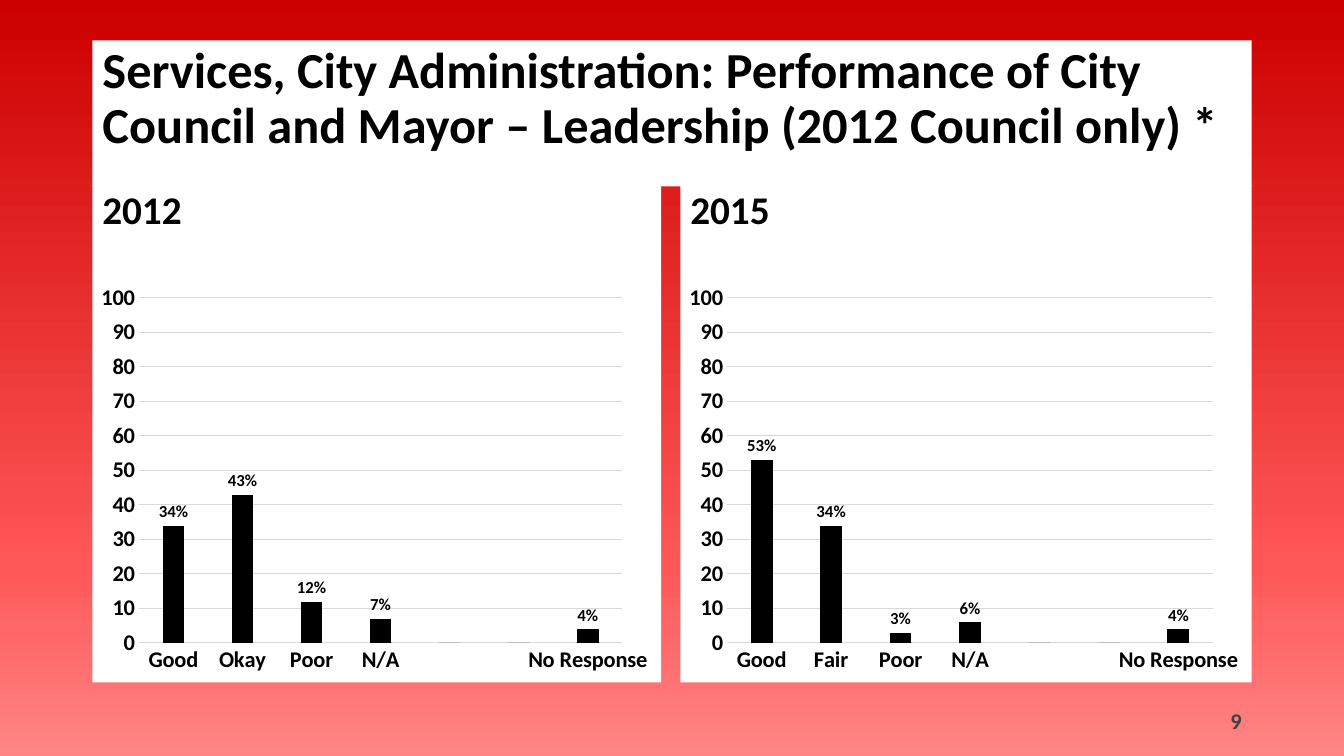
from copy import deepcopy
from dataclasses import dataclass

from lxml.etree import SubElement as Sub
from pptx import Presentation
from pptx.chart.data import CategoryChartData as Data
from pptx.dml.color import RGBColor as RGB
from pptx.enum.chart import XL_CHART_TYPE as Kind
from pptx.enum.chart import XL_LABEL_POSITION as Spot
from pptx.enum.chart import XL_TICK_MARK as Tick
from pptx.enum.text import MSO_ANCHOR as Anchor
from pptx.enum.text import MSO_AUTO_SIZE as Fit
from pptx.enum.text import PP_ALIGN as Align
from pptx.oxml.ns import qn
from pptx.util import Inches, Pt


@dataclass(frozen=True)
class Theme:
    """Colours, type sizes and font of the slide."""
    font: str = "Calibri"
    ink: str = "000000"
    paper: str = "FFFFFF"
    rule: str = "D9D9D9"
    grey: str = "404040"
    back: tuple = ((0, "CC0000"), (75, "FF5757"), (83, "FF6666"), (100, "FF8585"))
    title: int = 36
    head: int = 28
    axis: int = 16
    label: int = 12
    base: int = 10


class Deck:
    """A styled slide on a grid of 160 columns and 150 rows."""

    def __init__(self, theme):
        """Open a deck with one title-only slide."""
        self.theme = theme
        self.prs = Presentation()
        self.prs.slide_width, self.prs.slide_height = Inches(13.33), Inches(7.5)
        self.slide = self.prs.slides.add_slide(self.prs.slide_layouts[5])
        self.shapes = self.slide.shapes

    def box(self, col, row, cols, rows):
        """Turn grid units into lengths."""
        wide, high = self.prs.slide_width / 160, self.prs.slide_height / 150
        return [int(n) for n in (col * wide, row * high, cols * wide, rows * high)]

    def style(self, font, size, tint, bold=True):
        """Set the face, size and colour of a font."""
        font.name, font.size, font.bold = self.theme.font, Pt(size), bold
        font.color.rgb = RGB.from_string(tint)

    def backdrop(self):
        """Fill the background from top to bottom."""
        fill = self.slide.background.fill
        fill.gradient()
        fill.gradient_angle = 270
        stops = self.slide.element.find(".//" + qn("a:gsLst"))
        for _ in self.theme.back[2:]:
            stops.append(deepcopy(stops[0]))
        for stop, (place, tint) in zip(fill.gradient_stops, self.theme.back):
            stop.position = place / 100
            stop.color.rgb = RGB.from_string(tint)

    def label(self, shape, text, size, tint, align=Align.LEFT, anchor=Anchor.TOP):
        """Put one styled paragraph in a shape."""
        frame = shape.text_frame
        frame.word_wrap, frame.auto_size = True, Fit.NONE
        frame.vertical_anchor = anchor
        frame.text = text
        para = frame.paragraphs[0]
        para.alignment = align
        self.style(para.font, size, tint)
        return para

    def paint(self, shape):
        """Give a shape the paper colour."""
        shape.fill.solid()
        shape.fill.fore_color.rgb = RGB.from_string(self.theme.paper)

    def title(self, text, *area):
        """Place and fill the title."""
        shape = self.shapes.title
        shape.left, shape.top, shape.width, shape.height = self.box(*area)
        self.paint(shape)
        para = self.label(shape, text, self.theme.title, self.theme.ink)
        para.line_spacing = 0.9

    def head(self, text, *area):
        """Add a heading on paper."""
        shape = self.shapes.add_textbox(*self.box(*area))
        self.paint(shape)
        para = self.label(shape, text, self.theme.head, self.theme.ink)
        para.line_spacing, para.space_before = 0.9, Pt(10)

    def number(self, text, *area):
        """Add the page number."""
        shape = self.shapes.add_textbox(*self.box(*area))
        self.label(shape, text, self.theme.axis, self.theme.grey,
                   Align.RIGHT, Anchor.MIDDLE)

    def rule(self, line):
        """Draw a thin chart line."""
        line.color.rgb = RGB.from_string(self.theme.rule)
        line.width = Pt(0.75)

    def bars(self, names, vals, *area):
        """Add a column chart on paper."""
        look = self.theme
        data = Data()
        data.categories = names
        data.add_series("Series 1", vals)
        chart = self.shapes.add_chart(
            Kind.COLUMN_CLUSTERED, *self.box(*area), data).chart
        chart.has_legend = chart.has_title = False
        self.style(chart.font, look.base, look.ink, False)
        root = chart.element
        props = root.makeelement(qn("c:spPr"))
        fill = Sub(props, qn("a:solidFill"))
        Sub(fill, qn("a:srgbClr"), val=look.paper)
        Sub(Sub(props, qn("a:ln")), qn("a:noFill"))
        root.find(qn("c:txPr")).addprevious(props)

        for axis in (chart.category_axis, chart.value_axis):
            axis.major_tick_mark = axis.minor_tick_mark = Tick.NONE
            self.style(axis.tick_labels.font, look.axis, look.ink)
        self.rule(chart.category_axis.format.line)
        scale = chart.value_axis
        scale.minimum_scale, scale.maximum_scale, scale.major_unit = 0, 100, 10
        scale.format.line.fill.background()
        self.rule(scale.major_gridlines.format.line)

        plot = chart.plots[0]
        plot.gap_width, plot.overlap, plot.vary_by_categories = 219, -27, False
        fill = plot.series[0].format.fill
        fill.solid()
        fill.fore_color.rgb = RGB.from_string(look.ink)
        plot.has_data_labels = True
        tags = plot.data_labels
        tags.show_value, tags.position = True, Spot.OUTSIDE_END
        tags.number_format, tags.number_format_is_linked = '0"%";;', False
        self.style(tags.font, look.label, look.ink)


def main():
    """Build and save the survey slide."""
    deck = Deck(Theme())
    deck.backdrop()
    deck.title("Services, City Administration: Performance of City Council "
               "and Mayor – Leadership (2012 Council only) *", 11, 8, 138, 29)
    polls = (
        ("2012", "Okay", (34, 43, 12, 7, 0, 0, 4), 11, 67.7),
        ("2015", "Fair", (53, 34, 3, 6, 0, 0, 4), 81, 68),
    )
    for year, middle, vals, col, cols in polls:
        names = ("Good", middle, "Poor", "N/A", "", "", "No Response")
        deck.head(year, col, 36.8, cols, 18)
        deck.bars(names, vals, col, 54.8, cols, 80.6)
    deck.number("9", 113, 139, 36, 8)
    deck.prs.save("out.pptx")


if __name__ == "__main__":
    main()
